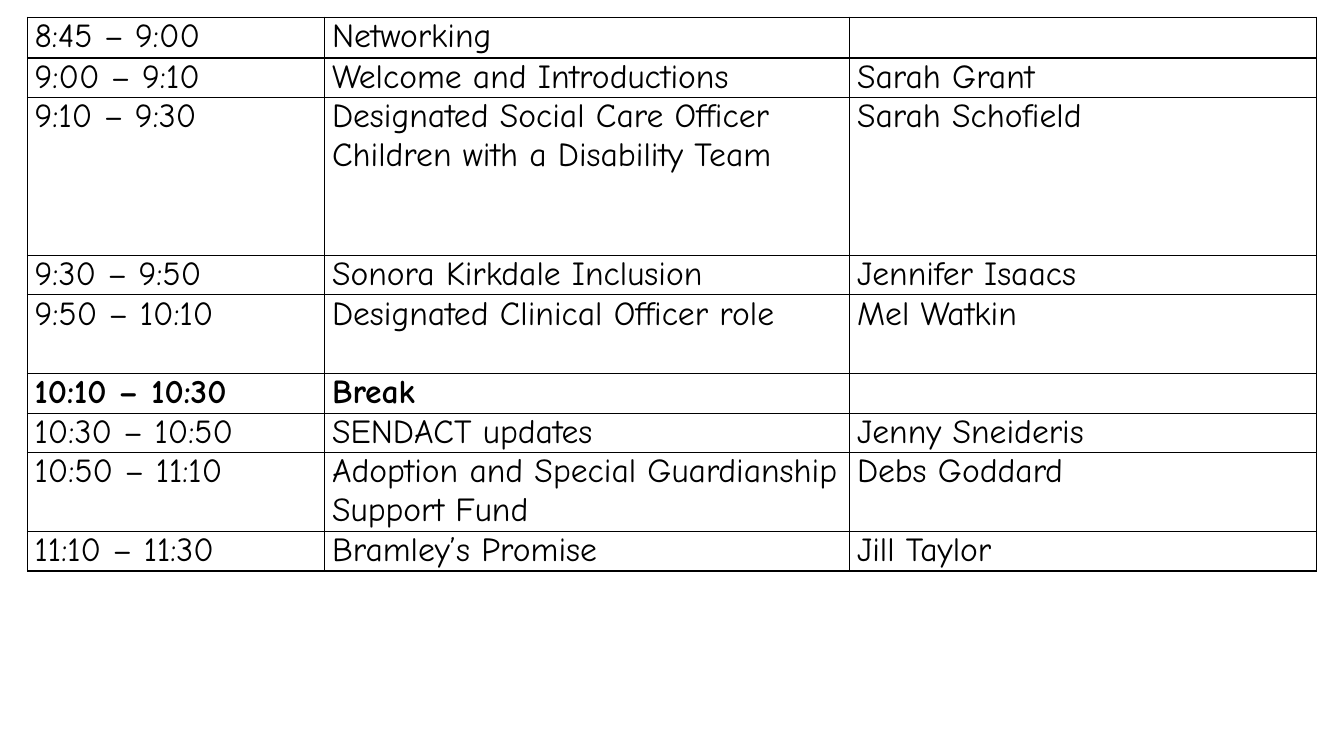
from dataclasses import dataclass

import pptx
import pptx.dml.color
import pptx.oxml
import pptx.oxml.ns
import pptx.util

Pt = pptx.util.Pt
RGBColor = pptx.dml.color.RGBColor


@dataclass(frozen=True)
class Theme:
    font: str = "Comic Neue"
    size: float = 24
    ink: str = "000000"
    border: float = 1
    inset: float = 5.2
    line: float = 28.2


# Time, topic, speaker, height in text lines
AGENDA = [
    ("8:45 – 9:00", "Networking", "", 1.03),
    ("9:00 – 9:10", "Welcome and Introductions", "Sarah Grant", 1),
    ("9:10 – 9:30",
     "Designated Social Care Officer\nChildren with a Disability Team",
     "Sarah Schofield", 4),
    ("9:30 – 9:50", "Sonora Kirkdale Inclusion", "Jennifer Isaacs", 1),
    ("9:50 – 10:10", "Designated Clinical Officer role", "Mel Watkin", 2),
    ("10:10 – 10:30", "Break", "", 1),
    ("10:30 – 10:50", "SENDACT updates", "Jenny Sneideris", 1),
    ("10:50 – 11:10", "Adoption and Special Guardianship Support Fund",
     "Debs Goddard", 2),
    ("11:10 – 11:30", "Bramley’s Promise", "Jill Taylor", 1),
]
COLUMN_WIDTHS = (212.4, 375, 333.4)


class Deck:
    def __init__(self, theme):
        self.theme = theme
        self.prs = pptx.Presentation()
        self.prs.slide_width = Pt(960)
        self.prs.slide_height = Pt(540)
        self.s = self.prs.slides.add_slide(self.prs.slide_layouts[6])

    def table(self, left, top, widths, agenda):
        heights = [row[-1] * self.theme.line for row in agenda]
        frame = self.s.shapes.add_table(
            len(agenda), len(widths), Pt(left), Pt(top),
            Pt(sum(widths)), Pt(sum(heights)))
        table = frame.table
        table.first_row = table.horz_banding = False
        for column, width in zip(table.columns, widths):
            column.width = Pt(width)
        for row, height, (*texts, _) in zip(table.rows, heights, agenda):
            row.height = Pt(height)
            for cell, text in zip(row.cells, texts):
                self.cell(cell, text, bold="Break" in texts)

    def cell(self, cell, text, bold):
        theme = self.theme
        cell.margin_left = cell.margin_right = Pt(theme.inset)
        cell.margin_top = cell.margin_bottom = 0
        cell.text_frame.text = text
        for p in cell.text_frame.paragraphs:
            for r in p.runs:
                r.font.name = theme.font
                r.font.size = Pt(theme.size)
                r.font.bold = bold
                r.font.color.rgb = RGBColor.from_string(theme.ink)
        self.borders(cell)
        cell.fill.background()

    def borders(self, cell):
        ns = pptx.oxml.ns.nsdecls("a")
        props = cell._tc.get_or_add_tcPr()
        for side in ("lnL", "lnR", "lnT", "lnB"):
            props.append(pptx.oxml.parse_xml(
                f'<a:{side} {ns} w="{Pt(self.theme.border)}"><a:solidFill>'
                f'<a:srgbClr val="{self.theme.ink}"/></a:solidFill></a:{side}>'))


def main():
    deck = Deck(Theme())
    deck.table(19.6, 12.4, COLUMN_WIDTHS, AGENDA)
    deck.prs.save("out.pptx")


if __name__ == "__main__":
    main()
